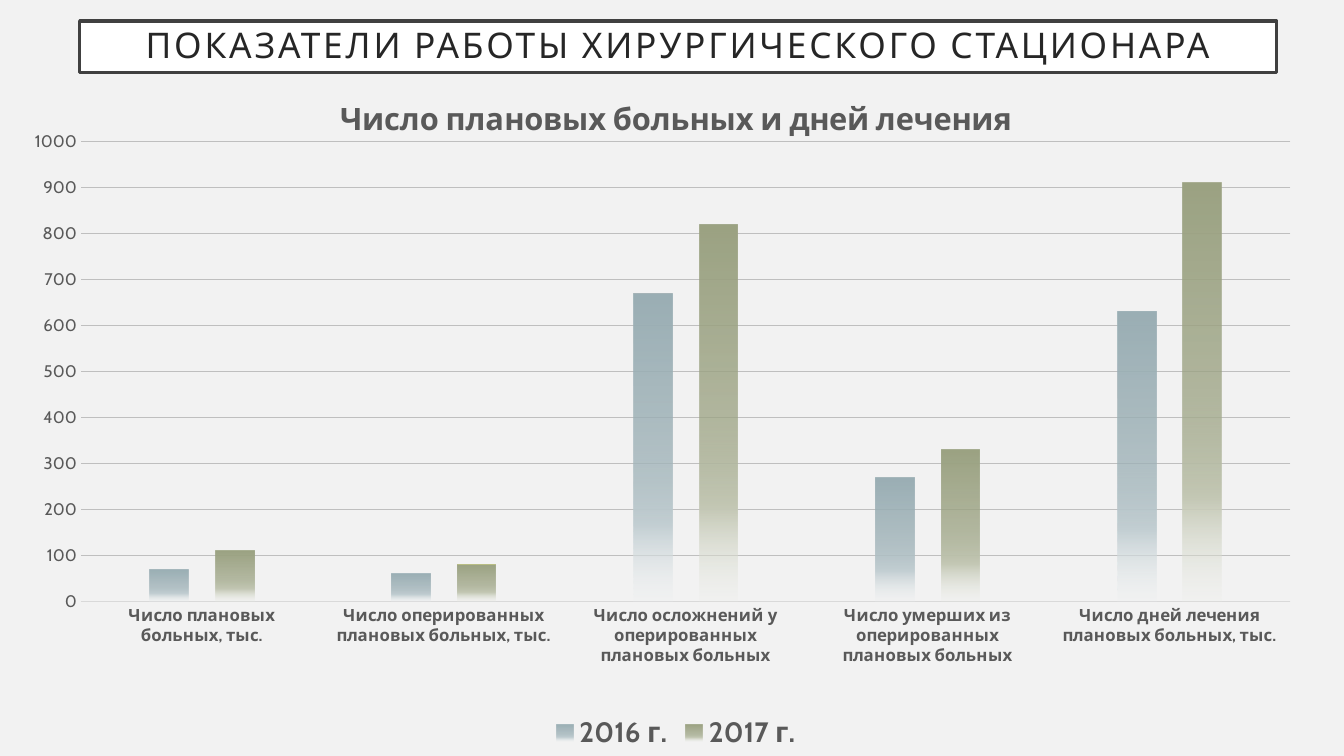
from dataclasses import dataclass

from pptx import Presentation
from pptx.chart.chart import Chart
from pptx.chart.data import CategoryChartData
from pptx.dml.color import RGBColor
from pptx.enum.chart import XL_CHART_TYPE, XL_LEGEND_POSITION, XL_TICK_MARK
from pptx.enum.text import MSO_ANCHOR, MSO_AUTO_SIZE, PP_ALIGN
from pptx.oxml import parse_xml
from pptx.oxml.ns import nsdecls
from pptx.util import Inches, Pt

FONT = "Cabin"
COLORS = {
    "background": "F2F2F2",
    "heading_fill": "FFFFFF",
    "heading_line": "404040",
    "heading_text": "262626",
    "chart_text": "595959",
    "axis": "D9D9D9",
    "grid": "BFBFBF",
    "blue": "9BAFB5",
    "blue_light": "C3CFD3",
    "blue_pale": "EBEFF0",
    "green": "9CA383",
    "green_light": "C4C8B5",
    "green_pale": "EBEDE6",
}
INDICATORS = [
    "Число плановых больных, тыс.",
    "Число оперированных плановых больных, тыс.",
    "Число осложнений у оперированных плановых больных",
    "Число умерших из оперированных плановых больных",
    "Число дней лечения плановых больных, тыс.",
]


@dataclass
class Year:
    name: str
    values: list[int]
    hue: str


YEARS = [
    Year("2016 г.", [70, 60, 670, 270, 630], "blue"),
    Year("2017 г.", [110, 80, 820, 330, 910], "green"),
]


def rgb(name: str) -> RGBColor:
    return RGBColor.from_string(COLORS[name])


def style_font(font, size: float, color: str, bold: bool = False) -> None:
    font.name = FONT
    font.size = Pt(size)
    font.bold = bold
    font.color.rgb = rgb(color)


def fade_bars(series, hue: str) -> None:
    """Fill bars with a gradient that turns transparent at the base."""
    stops = [(0, hue, 100), (51, hue, 75), (75, f"{hue}_light", 100), (100, f"{hue}_pale", 15)]
    stops_xml = "".join(
        f'<a:gs pos="{position * 1000}"><a:srgbClr val="{COLORS[color]}">'
        f'<a:alpha val="{opacity * 1000}"/></a:srgbClr></a:gs>'
        for position, color, opacity in stops
    )
    gradient = parse_xml(
        f'<a:gradFill {nsdecls("a")} rotWithShape="1"><a:gsLst>{stops_xml}</a:gsLst>'
        '<a:lin ang="5400000" scaled="0"/></a:gradFill>'
    )
    series.format.fill.solid()
    properties = series.format.fill._xPr
    properties.replace(properties.solidFill, gradient)


def place_plot(chart: Chart, x: float, y: float, w: float, h: float) -> None:
    """Fix the inner plot area, in fractions of the chart."""
    plot_area = chart._chartSpace.chart.plotArea
    for layout in plot_area.xpath("c:layout"):
        plot_area.remove(layout)
    sizes = "".join(f'<c:{key} val="{value}"/>' for key, value in zip("xywh", (x, y, w, h)))
    plot_area.insert(0, parse_xml(
        f'<c:layout {nsdecls("c")}><c:manualLayout><c:layoutTarget val="inner"/>'
        f'<c:xMode val="edge"/><c:yMode val="edge"/>{sizes}</c:manualLayout></c:layout>'
    ))


def add_indicator_chart(slide) -> None:
    data = CategoryChartData()
    data.categories = INDICATORS
    for year in YEARS:
        data.add_series(year.name, year.values)
    chart = slide.shapes.add_chart(
        XL_CHART_TYPE.COLUMN_CLUSTERED,
        Inches(0.33), Inches(0.72), Inches(12.75), Inches(6.78), data,
    ).chart
    style_font(chart.font, 10, "chart_text")

    # Chart title and legend
    chart.has_title = True
    chart_title = chart.chart_title.text_frame
    chart_title.text = "Число плановых больных и дней лечения"
    style_font(chart_title.paragraphs[0].font, 22, "chart_text", bold=True)
    chart.chart_title.include_in_layout = False
    chart.has_legend = True
    chart.legend.position = XL_LEGEND_POSITION.BOTTOM
    chart.legend.include_in_layout = False
    style_font(chart.legend.font, 20, "chart_text", bold=True)

    # Columns
    columns = chart.plots[0]
    columns.gap_width = 355
    columns.overlap = -70
    columns.vary_by_categories = False
    for series, year in zip(columns.series, YEARS):
        series.invert_if_negative = False
        fade_bars(series, year.hue)

    # Axes
    for axis, bold in ((chart.category_axis, True), (chart.value_axis, False)):
        axis.major_tick_mark = XL_TICK_MARK.NONE
        axis.minor_tick_mark = XL_TICK_MARK.NONE
        style_font(axis.tick_labels.font, 12, "chart_text", bold)
    indicator_line = chart.category_axis.format.line
    indicator_line.color.rgb = rgb("axis")
    indicator_line.width = Pt(0.75)
    scale = chart.value_axis
    scale.minimum_scale, scale.maximum_scale, scale.major_unit = 0, 1000, 100
    scale.format.line.fill.background()
    scale.has_major_gridlines = True
    grid_line = scale.major_gridlines.format.line
    grid_line.color.rgb = rgb("grid")
    grid_line.width = Pt(0.75)
    place_plot(chart, 0.037, 0.101, 0.941, 0.673)


def format_heading(heading) -> None:
    heading.left, heading.top = Inches(0.79), Inches(0.21)
    heading.width, heading.height = Inches(11.87), Inches(0.51)
    heading.fill.solid()
    heading.fill.fore_color.rgb = rgb("heading_fill")
    heading.line.color.rgb = rgb("heading_line")
    heading.line.width = Pt(2.5)
    frame = heading.text_frame
    frame.text = "ПОКАЗАТЕЛИ РАБОТЫ ХИРУРГИЧЕСКОГО СТАЦИОНАРА"
    frame.word_wrap = True
    frame.auto_size = MSO_AUTO_SIZE.NONE
    frame.vertical_anchor = MSO_ANCHOR.MIDDLE
    frame.margin_left = frame.margin_right = Inches(0.2)
    frame.margin_top = frame.margin_bottom = Inches(0.2)
    line = frame.paragraphs[0]
    line.alignment = PP_ALIGN.CENTER
    line.line_spacing = 0.9
    style_font(line.font, 25.2, "heading_text")
    # Letter spacing of 2 points
    line.runs[0].font._element.set("spc", "200")


def main() -> None:
    presentation = Presentation()
    presentation.slide_width = Inches(13.33)
    presentation.slide_height = Inches(7.5)
    slide = presentation.slides.add_slide(presentation.slide_layouts[5])
    slide.background.fill.solid()
    slide.background.fill.fore_color.rgb = rgb("background")
    format_heading(slide.shapes.title)
    add_indicator_chart(slide)
    presentation.save("out.pptx")


if __name__ == "__main__":
    main()
